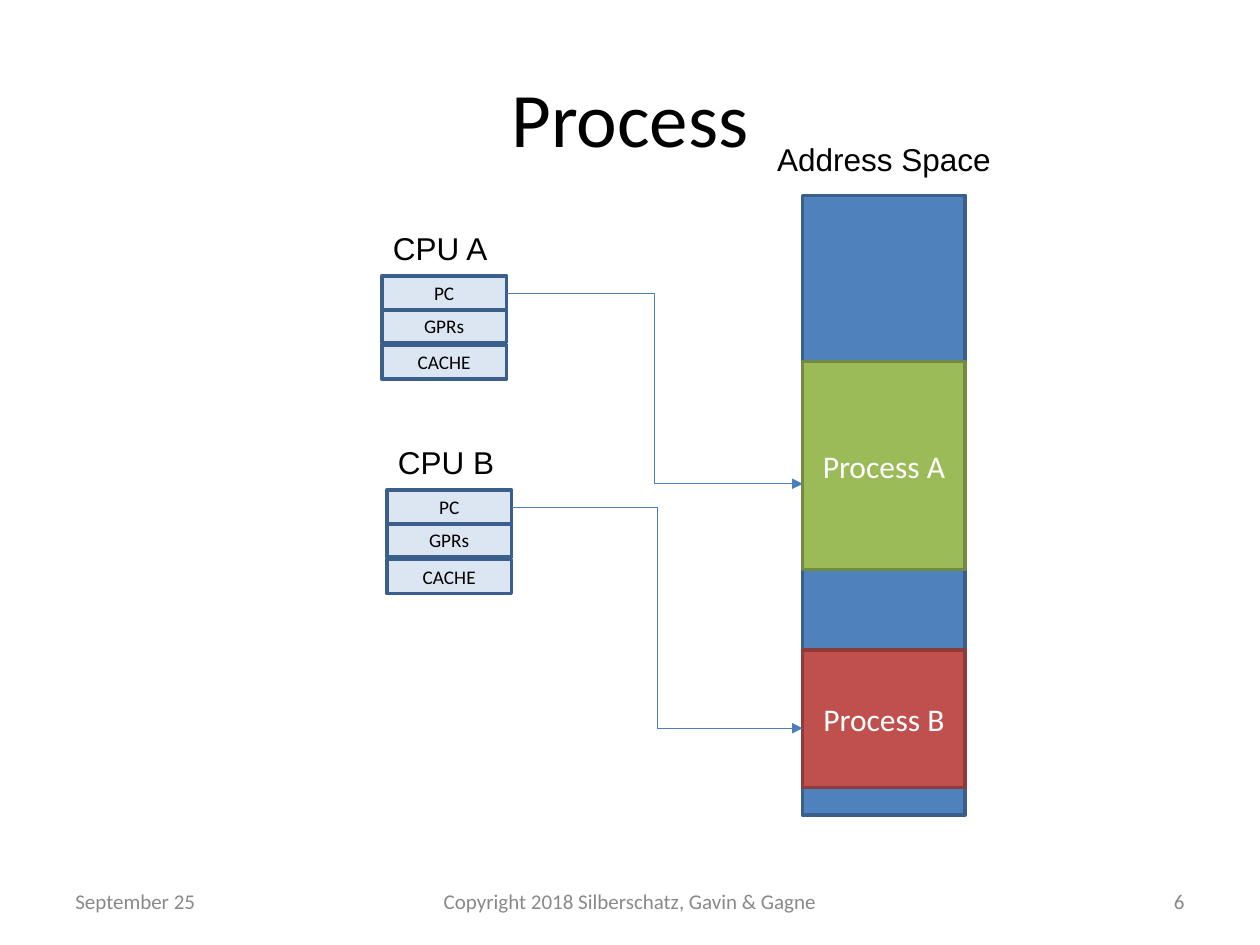
from lxml import etree
from pptx import Presentation
from pptx.dml.color import RGBColor
from pptx.enum.shapes import MSO_CONNECTOR, MSO_SHAPE
from pptx.enum.text import MSO_ANCHOR, PP_ALIGN
from pptx.oxml.ns import qn
from pptx.util import Inches, Pt

RECT, ELBOW = MSO_SHAPE.RECTANGLE, MSO_CONNECTOR.ELBOW
TOP, MIDDLE = MSO_ANCHOR.TOP, MSO_ANCHOR.MIDDLE
LEFT, CENTER, RIGHT = PP_ALIGN.LEFT, PP_ALIGN.CENTER, PP_ALIGN.RIGHT
COLORS = {
    "black": "000000", "white": "FFFFFF", "gray": "898989",
    "blue": "4F81BD", "navy": "3A5F8C", "pale": "DCE6F2", "wire": "4B7EBC",
    "green": "9BBB59", "moss": "738A42", "red": "C0504D", "wine": "8E3B39",
}


def color(name):
    """Return the named colour."""
    return RGBColor.from_string(COLORS[name])


def write(shape, text, size, ink, font="Calibri", align=CENTER, anchor=MIDDLE):
    """Put one formatted paragraph in a shape."""
    frame = shape.text_frame
    frame.word_wrap = True
    frame.vertical_anchor = anchor
    para = frame.paragraphs[0]
    para.text = text
    para.alignment = align
    para.font.name = font
    para.font.size = Pt(size)
    para.font.color.rgb = color(ink)


def label(slide, box, text, size=18, ink="black", font="Arial", align=LEFT, anchor=TOP):
    """Add a text box."""
    shape = slide.shapes.add_textbox(*map(Inches, box))
    write(shape, text, size, ink, font, align, anchor)


def block(slide, box, fill, edge, text="", size=18, ink="white"):
    """Add an outlined rectangle, with text if given."""
    shape = slide.shapes.add_shape(RECT, *map(Inches, box))
    shape.shadow.inherit = False
    shape.fill.solid()
    shape.fill.fore_color.rgb = color(fill)
    shape.line.color.rgb = color(edge)
    shape.line.width = Pt(2)
    if text:
        write(shape, text, size, ink)


def arrow(slide, start, end):
    """Add a bent arrow between two points."""
    line = slide.shapes.add_connector(ELBOW, *map(Inches, start + end))
    line.line.color.rgb = color("wire")
    line.line.width = Pt(0.5)
    props = line._element.spPr
    etree.SubElement(props.find(qn("a:ln")), qn("a:tailEnd"), type="triangle")
    etree.SubElement(props, qn("a:effectLst"))


def title(slide, box, text):
    """Place and fill the title."""
    shape = slide.shapes.title
    shape.left, shape.top, shape.width, shape.height = map(Inches, box)
    write(shape, text, 44, "black")


def footer(slide, box):
    """Add the date, copyright and page number."""
    left, top, width, height = box
    side, mid = 2.33, 3.17
    parts = [
        (left, side, "September 25", LEFT),
        (left + (width - mid) / 2, mid, "Copyright 2018 Silberschatz, Gavin & Gagne", CENTER),
        (left + width - side, side, "6", RIGHT),
    ]
    for x, wide, text, align in parts:
        label(slide, (x, top, wide, height), text, 12, "gray", "Calibri", align, MIDDLE)


def cpu(slide, box, name):
    """Add a named processor with its three parts."""
    left, top, width, height = box
    label(slide, (left - 0.01, top - 0.42, 1, 0.4), name)
    for text, drop in (("GPRs", 0.26), ("CACHE", 0.55), ("PC", 0)):
        block(slide, (left, top + drop, width, height), "pale", "navy", text, 11, "black")


def memory(slide, box):
    """Add the address space with its two processes."""
    left, top, width, height = box
    label(slide, (left - 0.3, top - 0.49, 2.04, 0.4), "Address Space")
    block(slide, box, "blue", "navy")
    for text, drop, tall, fill, edge in (
        ("Process A", 1.32, 1.65, "green", "moss"),
        ("Process B", 3.61, 1.09, "red", "wine"),
    ):
        block(slide, (left, top + drop, width, tall), fill, edge, text)


def main():
    """Build and save the slide."""
    deck = Presentation()
    deck.slide_width, deck.slide_height = Inches(10), Inches(7.5)
    slide = deck.slides.add_slide(deck.slide_layouts[5])
    title(slide, (0.5, 0.3, 9, 1.25), "Process")
    footer(slide, (0.5, 6.95, 9, 0.4))
    memory(slide, (6.37, 1.55, 1.29, 4.92))
    for name, left, top, goal in (("CPU A", 3.03, 2.19, 3.84), ("CPU B", 3.07, 3.89, 5.78)):
        cpu(slide, (left, top, 0.99, 0.27), name)
        arrow(slide, (left + 0.99, top + 0.14), (6.37, goal))
    deck.save("out.pptx")


if __name__ == "__main__":
    main()
